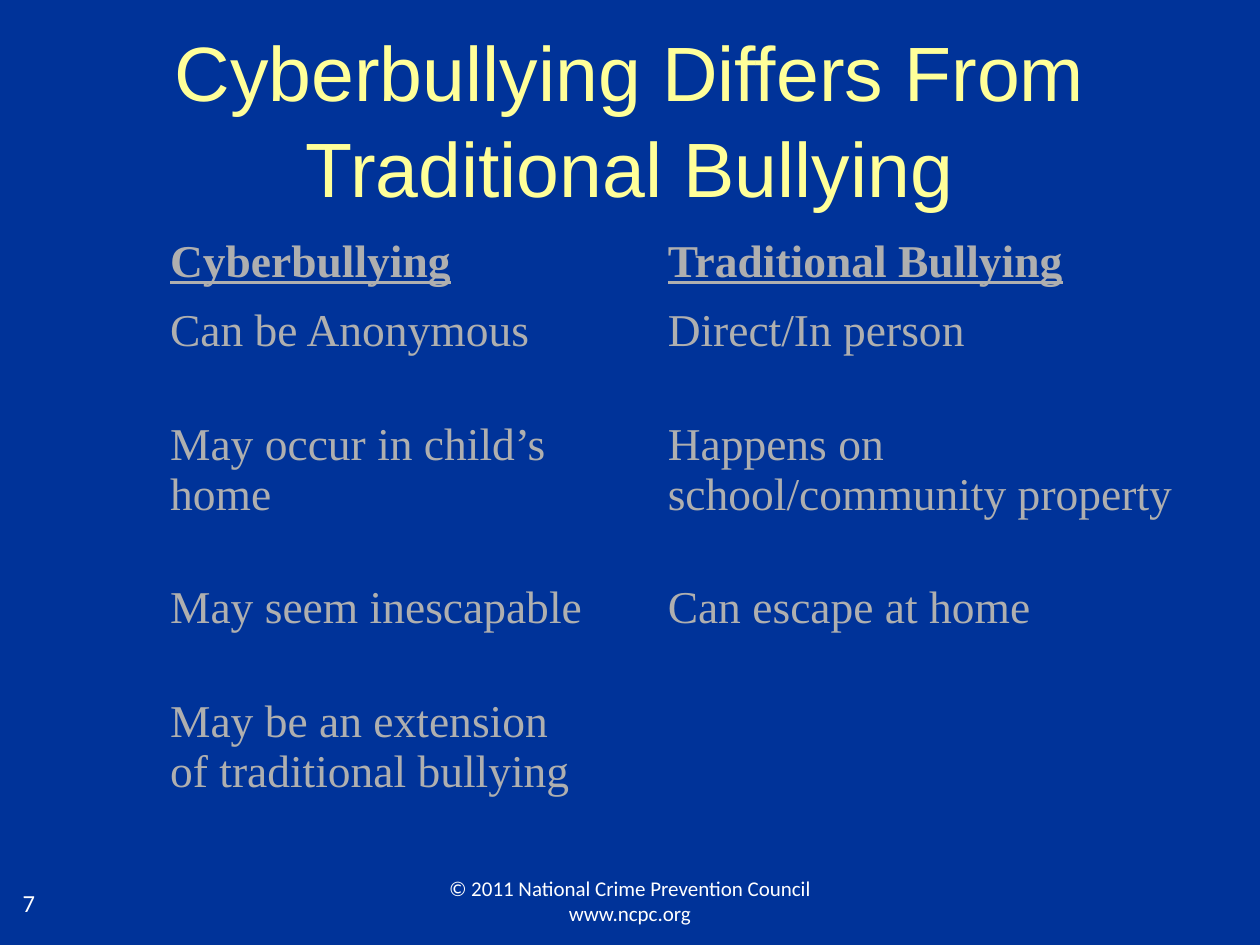
from pptx import Presentation
from pptx.dml.color import RGBColor
from pptx.enum import text
from pptx.util import Pt

NAVY = RGBColor(0x00, 0x33, 0x99)
YELLOW = RGBColor(0xFF, 0xFF, 0x99)
GRAY = RGBColor(0xAF, 0xAF, 0xAF)
WHITE = RGBColor(0xFF, 0xFF, 0xFF)
DRAWING = "{http://schemas.openxmlformats.org/drawingml/2006/main}"

COMPARISON = [
    ("Cyberbullying", "Traditional Bullying"),
    ("Can be Anonymous", "Direct/In person"),
    ("May occur in child’s\nhome", "Happens on school/community property"),
    ("May seem inescapable", "Can escape at home"),
    ("May be an extension\nof traditional bullying", ""),
]
COLUMN_WIDTHS = (284.4, 309.6)
ROW_HEIGHTS = (39.6, 64.8, 93.6, 64.8, 89.3)


class ComparisonSlide:
    title_font = "Arial"
    body_font = "Times New Roman"
    footer_font = "Calibri"

    def __init__(self, deck):
        self.slide = deck.slides.add_slide(deck.slide_layouts[5])
        fill = self.slide.background.fill
        fill.solid()
        fill.fore_color.rgb = NAVY

    def fill_text(self, frame, words, font, size, color, align=text.PP_ALIGN.LEFT, heading=False):
        frame.text = words
        frame.word_wrap = True
        for paragraph in frame.paragraphs:
            paragraph.alignment = align
            for run in paragraph.runs:
                run.font.name = font
                run.font.size = Pt(size)
                run.font.color.rgb = color
                run.font.bold = heading
                run.font.underline = heading

    def title(self, words, left, top, width, height):
        title = self.slide.shapes.title
        title.left, title.top = Pt(left), Pt(top)
        title.width, title.height = Pt(width), Pt(height)
        frame = title.text_frame
        self.fill_text(frame, words, self.title_font, 44, YELLOW, text.PP_ALIGN.CENTER)
        frame.auto_size = text.MSO_AUTO_SIZE.NONE
        frame.vertical_anchor = text.MSO_ANCHOR.MIDDLE
        frame.paragraphs[0].line_spacing = 1.04

    def label(self, words, left, top, width, height, size,
              align=text.PP_ALIGN.LEFT, anchor=text.MSO_ANCHOR.TOP):
        box = self.slide.shapes.add_textbox(Pt(left), Pt(top), Pt(width), Pt(height))
        self.fill_text(box.text_frame, words, self.footer_font, size, WHITE, align)
        box.text_frame.vertical_anchor = anchor

    def table(self, rows, left, top, widths, heights):
        table = self.slide.shapes.add_table(
            len(rows), len(widths), Pt(left), Pt(top), Pt(sum(widths)), Pt(sum(heights))
        ).table
        table.first_row = table.horz_banding = False
        for column, width in zip(table.columns, widths):
            column.width = Pt(width)
        for r, (entries, height) in enumerate(zip(rows, heights)):
            table.rows[r].height = Pt(height)
            for c, words in enumerate(entries):
                cell = table.cell(r, c)
                cell.fill.solid()
                cell.fill.fore_color.rgb = NAVY
                self.fill_text(cell.text_frame, words, self.body_font, 26, GRAY, heading=r == 0)
                self.clear_borders(cell)

    def clear_borders(self, cell):
        properties = cell._tc.get_or_add_tcPr()
        for index, side in enumerate(("lnL", "lnR", "lnT", "lnB")):
            border = properties.makeelement(DRAWING + side, {"w": "0"})
            border.append(border.makeelement(DRAWING + "noFill", {}))
            properties.insert(index, border)


def main():
    deck = Presentation()
    deck.slide_width, deck.slide_height = Pt(720), Pt(540)
    slide = ComparisonSlide(deck)
    slide.title("Cyberbullying Differs From Traditional Bullying", 36, 21.6, 648, 90)
    slide.table(COMPARISON, 90, 131.8, COLUMN_WIDTHS, ROW_HEIGHTS)
    slide.label("7", 5.8, 504, 167.8, 25.2, 14)
    slide.label("© 2011 National Crime Prevention Council www.ncpc.org", 246, 500.4, 228, 28.8, 12,
                text.PP_ALIGN.CENTER, text.MSO_ANCHOR.MIDDLE)
    deck.save("out.pptx")


if __name__ == "__main__":
    main()
